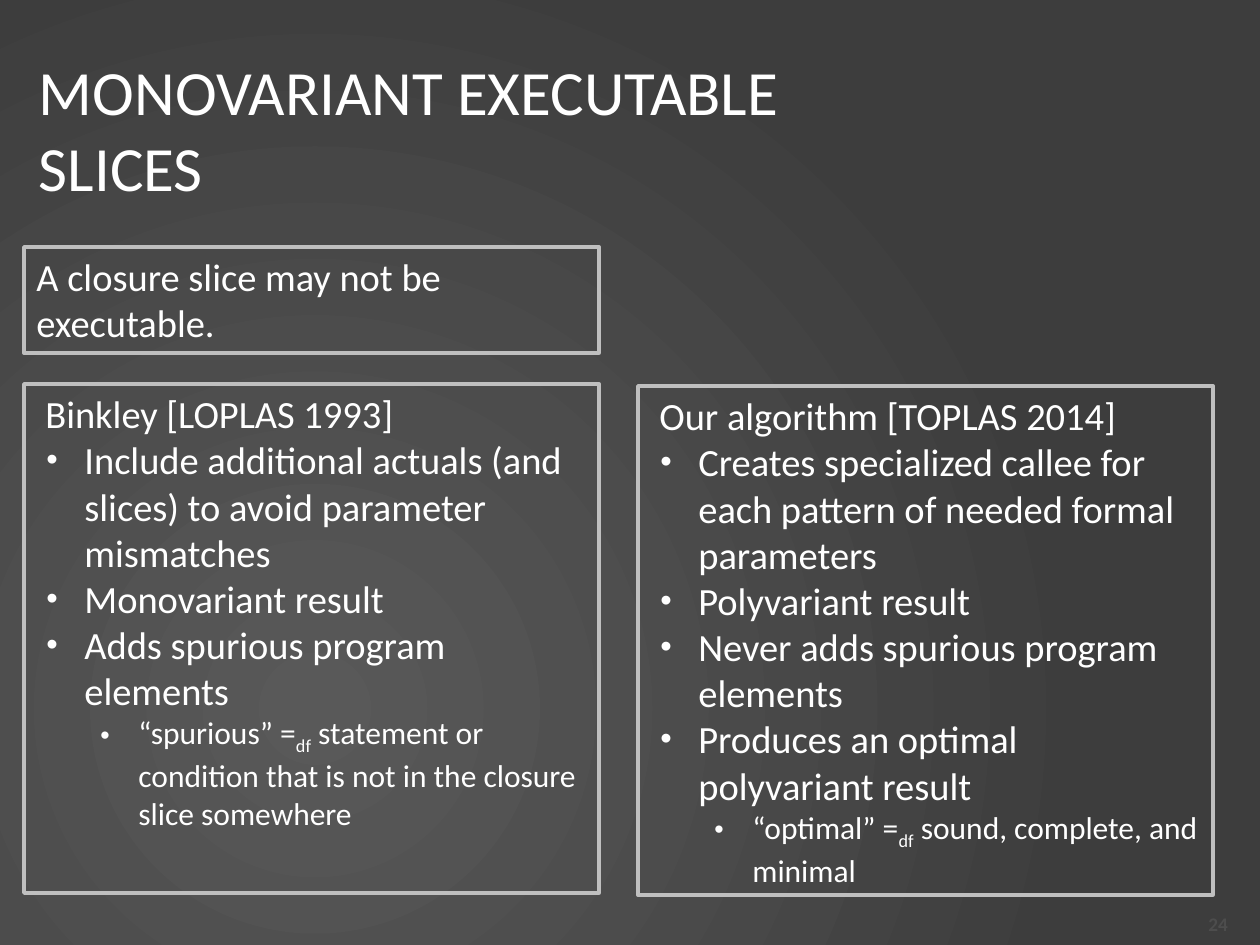
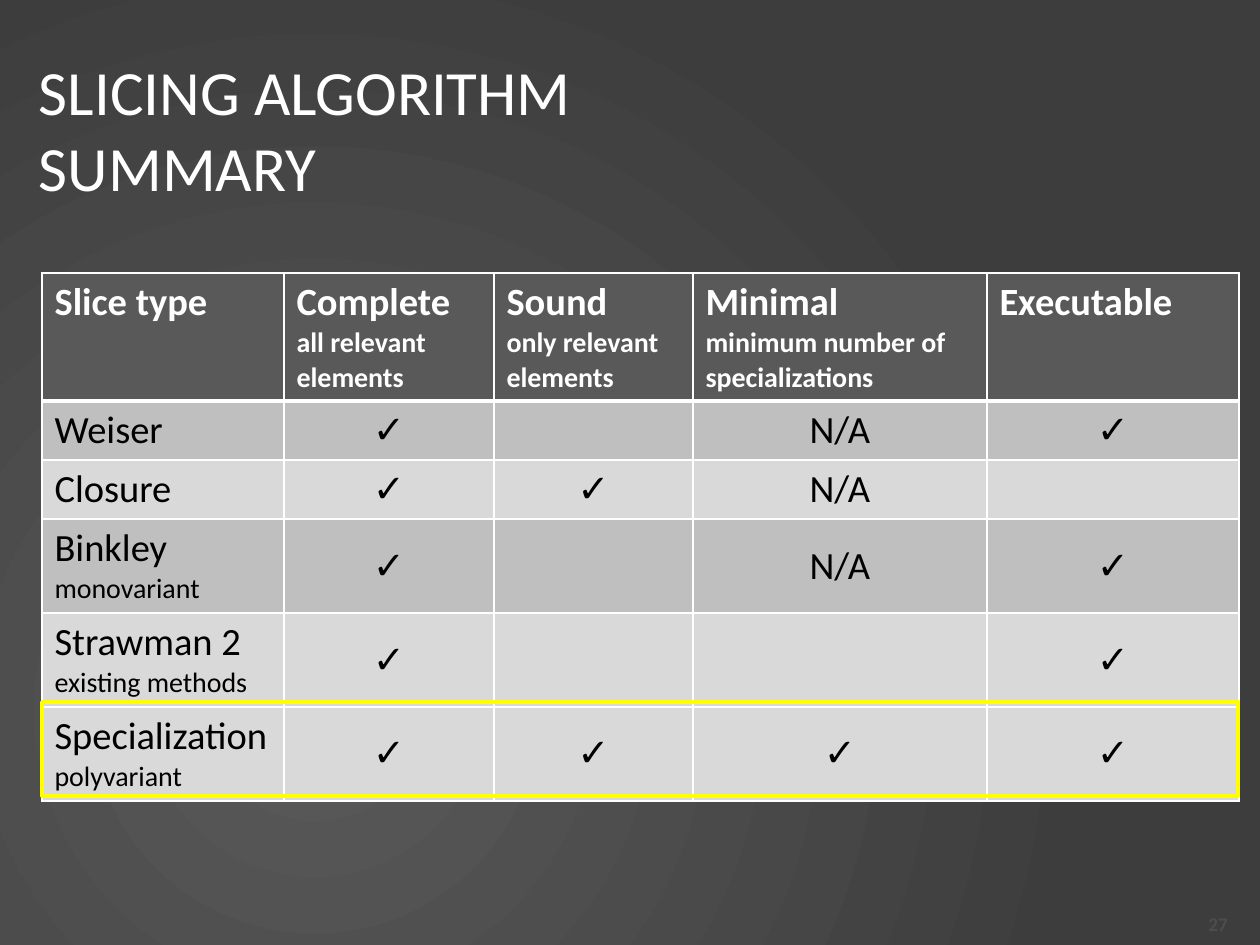
from dataclasses import dataclass

from lxml import etree
from pptx import Presentation
from pptx import util as u
from pptx.dml.color import RGBColor
from pptx.enum import shapes, text
from pptx.oxml.ns import qn

EMU_PER_PX = 914400 / 126
ALIGN = text.PP_ALIGN
ANCHOR = text.MSO_ANCHOR


@dataclass(frozen=True)
class Theme:
    font: str = "Calibri"
    white: str = "FFFFFF"
    black: str = "000000"
    glow: str = "595959"
    backdrop: str = "3D3D3D"
    frame: str = "BFBFBF"
    band_dark: str = "BFBFBF"
    band_light: str = "D9D9D9"
    highlight: str = "FFFF00"
    page_number: str = "4D4D4D"
    title_size: int = 36
    body_size: int = 22
    detail_size: int = 18
    caption_size: int = 16
    number_size: int = 11


THEME = Theme()


def px(length):
    return u.Emu(round(length * EMU_PER_PX))


def box(*lengths):
    return [px(length) for length in lengths]


def rgb(colour):
    return RGBColor.from_string(colour)


def add_xml(parent, tag, **attributes):
    child = etree.SubElement(parent, qn(tag))
    for name, value in attributes.items():
        child.set(name, str(value))
    return child


def write(paragraph, content, size=THEME.body_size, colour=THEME.white,
          bold=False, align=ALIGN.LEFT, margin=0, hanging=0, level=0):
    """Fill a paragraph; text between ~ marks is subscript, hanging adds a bullet."""
    paragraph.alignment = align
    paragraph.level = level
    properties = paragraph._p.get_or_add_pPr()
    properties.set("marL", str(px(margin)))
    properties.set("indent", str(px(-hanging)))
    if hanging:
        add_xml(properties, "a:buSzPct", val=85000)
        add_xml(properties, "a:buFont", typeface="Arial")
        add_xml(properties, "a:buChar", char="•")
    for index, part in enumerate(content.split("~")):
        run = paragraph.add_run()
        run.text = part
        font = run.font
        font.name, font.size, font.bold = THEME.font, u.Pt(size), bold
        font.color.rgb = rgb(colour)
        if index % 2:
            run._r.get_or_add_rPr().set("baseline", "-25000")


def next_paragraph(frame, index):
    return frame.add_paragraph() if index else frame.paragraphs[0]


def add_label(slide, position, content, anchor=ANCHOR.MIDDLE, **style):
    frame = slide.shapes.add_textbox(*box(*position)).text_frame
    frame.word_wrap = True
    frame.margin_left = frame.margin_right = 0
    frame.vertical_anchor = anchor
    write(frame.paragraphs[0], content, **style)


def add_frame(slide, position, colour):
    """Add an unfilled rectangle with a coloured outline."""
    shape = slide.shapes.add_shape(shapes.MSO_SHAPE.RECTANGLE, *box(*position))
    shape.shadow.inherit = False
    shape.fill.background()
    shape.line.color.rgb = rgb(colour)
    shape.line.width = u.Pt(2)
    return shape


def add_panel(slide, position, paragraphs):
    """Add a framed text panel from (text, style) pairs."""
    frame = add_frame(slide, position, THEME.frame).text_frame
    frame.word_wrap = True
    frame.vertical_anchor = ANCHOR.TOP
    for index, (content, style) in enumerate(paragraphs):
        write(next_paragraph(frame, index), content, **style)


def outline(heading, points, definition):
    """List a heading, its bullets and a closing second-level bullet."""
    return [
        (heading, dict(margin=9)),
        *[(point, dict(margin=48, hanging=38)) for point in points],
        (definition, dict(margin=102, hanging=38, level=1, size=THEME.detail_size)),
    ]


def set_background(slide):
    fill = slide.background.fill
    fill.gradient()
    for stop, position, colour in zip(
            fill.gradient_stops, (0, 1), (THEME.glow, THEME.backdrop)):
        stop.position = position
        stop.color.rgb = rgb(colour)
    gradient = slide.element.find(".//" + qn("a:gradFill"))
    gradient.remove(gradient.find(qn("a:lin")))
    circle = add_xml(gradient, "a:path", path="circle")
    add_xml(circle, "a:fillToRect", l=50000, t=100000, r=100000, b=50000)


def add_slide(presentation, title, title_width, number):
    slide = presentation.slides.add_slide(presentation.slide_layouts[6])
    set_background(slide)
    add_label(slide, (39, 39, title_width, 179), title, size=THEME.title_size)
    add_label(slide, (1108, 906, 120, 36), number, size=THEME.number_size,
              colour=THEME.page_number, bold=True, align=ALIGN.RIGHT)
    return slide


def set_borders(cell, **widths):
    """Draw white borders, with widths in points by side: L, R, T, B."""
    properties = cell._tc.get_or_add_tcPr()
    for index, side in enumerate("LRTB"):
        line = add_xml(properties, f"a:ln{side}", w=u.Pt(widths.get(side, 1)))
        add_xml(add_xml(line, "a:solidFill"), "a:srgbClr", val=THEME.white)
        properties.insert(index, line)


def fill_cell(cell, content, fill, **style):
    """Write a cell whose lines after the first are captions."""
    cell.fill.solid()
    cell.fill.fore_color.rgb = rgb(fill)
    for index, line in enumerate(content.split("\n") if content else []):
        size = THEME.caption_size if index else THEME.body_size
        write(next_paragraph(cell.text_frame, index), line, size=size, **style)


def add_summary_table(slide, left, top, widths, heights, header, rows):
    table = slide.shapes.add_table(
        len(heights), len(widths),
        *box(left, top, sum(widths), sum(heights))).table
    table.horz_banding = False
    for column, width in zip(table.columns, widths):
        column.width = px(width)
    for row, height in zip(table.rows, heights):
        row.height = px(height)
    for column, content in enumerate(header):
        cell = table.cell(0, column)
        fill_cell(cell, content, THEME.glow, bold=True)
        set_borders(cell, B=3)
    for row, (fill, *contents) in enumerate(rows, start=1):
        for column, content in enumerate(contents):
            cell = table.cell(row, column)
            if column:
                cell.vertical_anchor = ANCHOR.MIDDLE
            fill_cell(cell, content, fill, colour=THEME.black,
                      align=ALIGN.CENTER if column else ALIGN.LEFT)
            set_borders(cell, T=3 if row == 1 else 1)


def build_executable_slices(presentation):
    slide = add_slide(presentation, "MONOVARIANT EXECUTABLE SLICES", 748, "24")
    add_panel(slide, (24, 247, 575, 106),
              [("A closure slice may not be executable.", {})])
    add_panel(slide, (24, 384, 575, 509), outline(
        "Binkley [LOPLAS 1993]",
        ["Include additional actuals (and slices) to avoid parameter mismatches",
         "Monovariant result",
         "Adds spurious program elements"],
        "“spurious” =~df~ statement or condition that is not in the closure"
        " slice somewhere"))
    add_panel(slide, (638, 386, 575, 509), outline(
        "Our algorithm [TOPLAS 2014]",
        ["Creates specialized callee for each pattern of needed formal parameters",
         "Polyvariant result",
         "Never adds spurious program elements",
         "Produces an optimal polyvariant result"],
        "“optimal” =~df~ sound, complete, and minimal"))


def build_algorithm_summary(presentation):
    slide = add_slide(presentation, "SLICING ALGORITHM SUMMARY", 685, "27")
    yes, no, na = "✓", "", "N/A"
    dark, light = THEME.band_dark, THEME.band_light
    add_summary_table(
        slide, 42, 273,
        widths=[242, 210, 199, 294, 252],
        heights=[128, 59, 59, 94, 94, 94],
        header=["Slice type", "Complete\nall relevant elements",
                "Sound\nonly relevant elements",
                "Minimal\nminimum number of specializations", "Executable"],
        rows=[
            (dark, "Weiser", yes, no, na, yes),
            (light, "Closure", yes, yes, na, no),
            (dark, "Binkley\nmonovariant", yes, no, na, yes),
            (light, "Strawman 2\nexisting methods", yes, no, no, yes),
            (light, "Specialization\npolyvariant", yes, yes, yes, yes),
        ])
    add_frame(slide, (42, 702, 1196, 94), THEME.highlight)


def main():
    presentation = Presentation()
    presentation.slide_width, presentation.slide_height = box(1260, 945)
    build_executable_slices(presentation)
    build_algorithm_summary(presentation)
    presentation.save("out.pptx")


if __name__ == "__main__":
    main()
